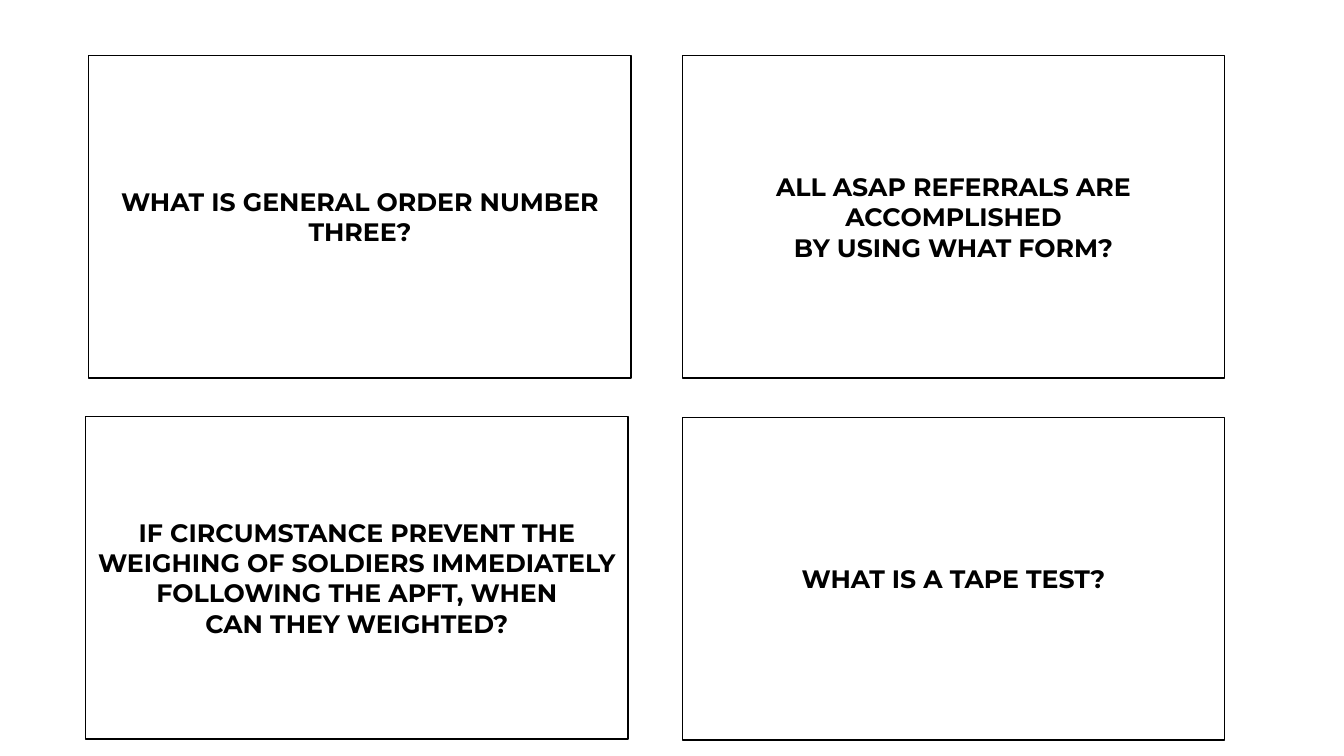
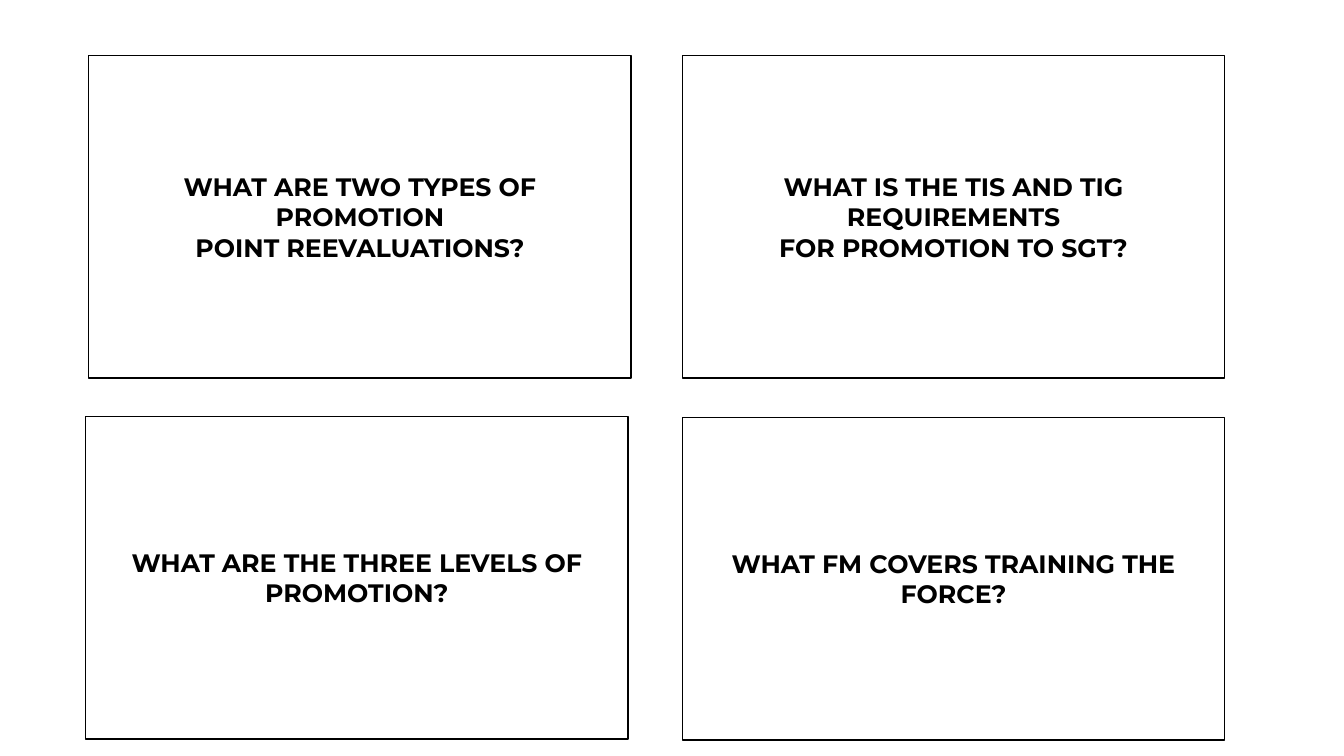
from pptx import Presentation
from pptx.dml.color import RGBColor
from pptx.enum.shapes import MSO_SHAPE
from pptx.enum.text import MSO_ANCHOR, PP_ALIGN
from pptx.util import Pt

# Content: four questions a slide, row by row
DECK = [
    [
        ["WHAT IS GENERAL ORDER NUMBER", "THREE?"],
        ["ALL ASAP REFERRALS ARE ACCOMPLISHED", "BY USING WHAT FORM?"],
        ["IF CIRCUMSTANCE PREVENT THE", "WEIGHING OF SOLDIERS IMMEDIATELY",
         "FOLLOWING THE APFT, WHEN", "CAN THEY WEIGHTED?"],
        ["WHAT IS A TAPE TEST?"],
    ],
    [
        ["WHAT ARE TWO TYPES OF PROMOTION", "POINT REEVALUATIONS?"],
        ["WHAT IS THE TIS AND TIG REQUIREMENTS", "FOR PROMOTION TO SGT?"],
        ["WHAT ARE THE THREE LEVELS OF", "PROMOTION?"],
        ["WHAT FM COVERS TRAINING THE", "FORCE?"],
    ],
]

# Theme
THEME = {
    "paper": RGBColor(255, 255, 255),
    "ink": RGBColor(0, 0, 0),
    "rule": Pt(1),
    "font": {"name": "Montserrat", "size": Pt(18), "bold": True},
}

# Layout in points: the lower left card sits slightly off the grid
PAGE = (960, 540)
CARD = (387.4, 230.4)
SPOTS = [(63.4, 39.6), (487.4, 39.6), (61.2, 297.4), (487.4, 298.1)]


def add_card(slide, spot, lines):
    """Draw one outlined question card."""
    card = slide.shapes.add_shape(
        MSO_SHAPE.RECTANGLE, *(Pt(n) for n in spot + CARD))
    card.shadow.inherit = False
    card.fill.solid()
    card.fill.fore_color.rgb = THEME["paper"]
    card.line.color.rgb = THEME["ink"]
    card.line.width = THEME["rule"]

    # Question text
    frame = card.text_frame
    frame.word_wrap = True
    frame.vertical_anchor = MSO_ANCHOR.MIDDLE
    frame.text = "\n".join(lines)
    for para in frame.paragraphs:
        para.alignment = PP_ALIGN.CENTER
        for run in para.runs:
            for key, value in THEME["font"].items():
                setattr(run.font, key, value)
            run.font.color.rgb = THEME["ink"]


def main():
    deck = Presentation()
    deck.slide_width, deck.slide_height = (Pt(n) for n in PAGE)
    blank = deck.slide_layouts[6]
    for cards in DECK:
        slide = deck.slides.add_slide(blank)
        for spot, lines in zip(SPOTS, cards):
            add_card(slide, spot, lines)
    deck.save("out.pptx")


if __name__ == "__main__":
    main()
